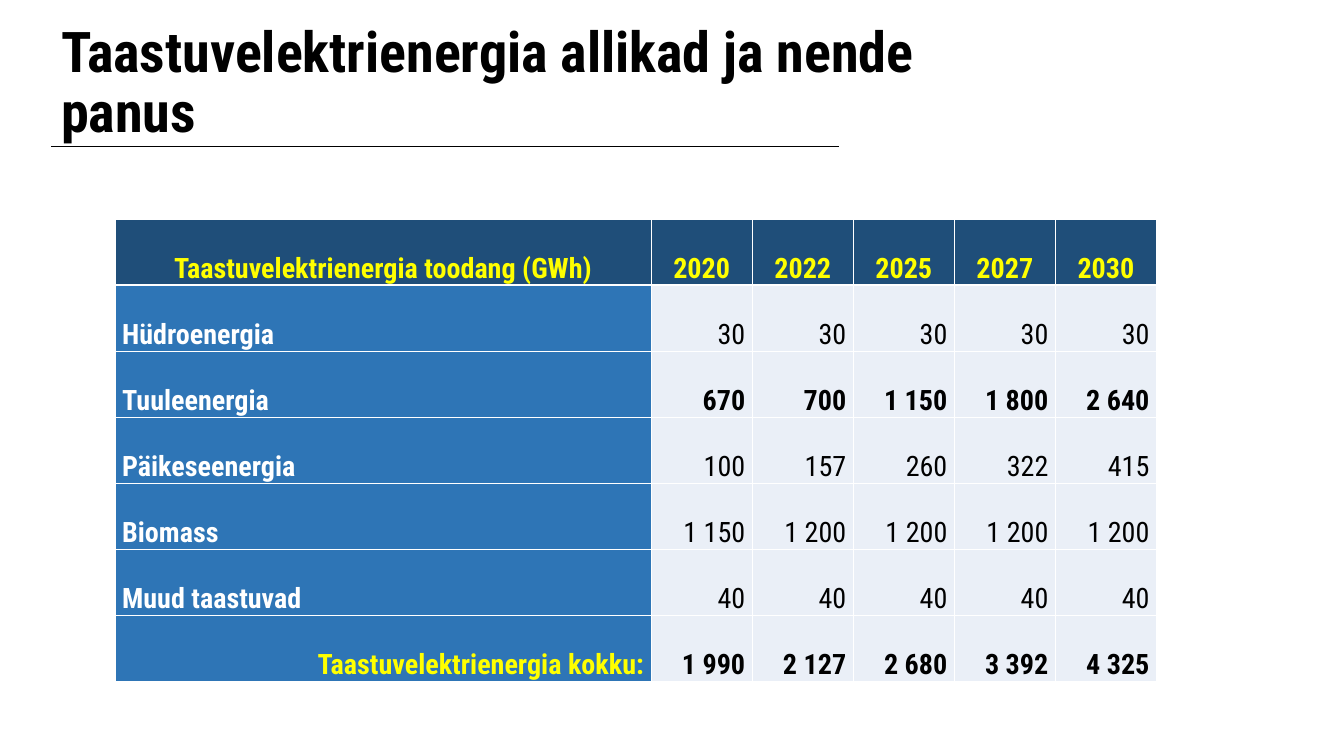
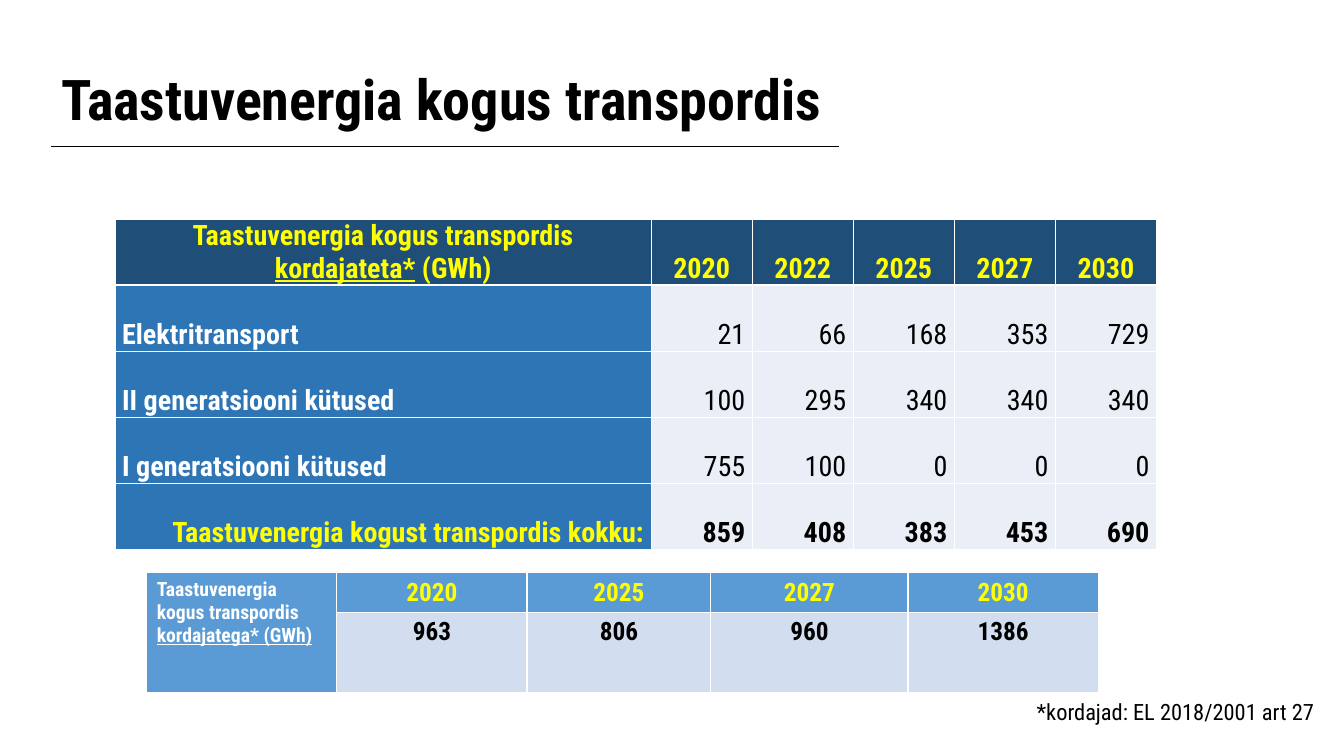
"""Build two slides with tables on renewable energy in electricity and transport."""
from lxml.etree import SubElement
from pptx import Presentation
from pptx.dml.color import RGBColor
from pptx.enum.shapes import MSO_CONNECTOR
from pptx.enum.text import MSO_ANCHOR, MSO_AUTO_SIZE, PP_ALIGN
from pptx.oxml.ns import qn
from pptx.util import Pt

FONT = "Roboto Condensed"
BLACK = RGBColor(0x00, 0x00, 0x00)
WHITE = RGBColor(0xFF, 0xFF, 0xFF)
YELLOW = RGBColor(0xFF, 0xFF, 0x00)
NAVY = RGBColor(0x1F, 0x4E, 0x79)
BLUE = RGBColor(0x2E, 0x75, 0xB6)
PALE = RGBColor(0xEA, 0xEF, 0xF7)
SKY = RGBColor(0x5B, 0x9B, 0xD5)
MIST = RGBColor(0xD2, 0xDE, 0xEF)

YEARS = ["2020", "2022", "2025", "2027", "2030"]
SLIDES = [
    {
        "title": "Taastuvelektrienergia allikad ja nende panus",
        "title_top": 14, "title_height": 92,
        "heading": "Taastuvelektrienergia toodang (GWh)", "heading_spacing": 2,
        "rows": [
            ("Hüdroenergia", ["30", "30", "30", "30", "30"]),
            ("Tuuleenergia", ["670", "700", "1 150", "1 800", "2 640"]),
            ("Päikeseenergia", ["100", "157", "260", "322", "415"]),
            ("Biomass", ["1 150", "1 200", "1 200", "1 200", "1 200"]),
            ("Muud taastuvad", ["40", "40", "40", "40", "40"]),
            ("Taastuvelektrienergia kokku:", ["1 990", "2 127", "2 680", "3 392", "4 325"]),
        ],
        "bold_rows": {"Tuuleenergia"},
    },
    {
        "title": "Taastuvenergia kogus transpordis",
        "title_top": 49, "title_height": 48,
        "heading": [("Taastuvenergia kogus transpordis ", False),
                    ("kordajateta*", True), (" (GWh)", False)],
        "heading_spacing": 1,
        "rows": [
            ("Elektritransport", ["21", "66", "168", "353", "729"]),
            ("II generatsiooni kütused", ["100", "295", "340", "340", "340"]),
            ("I generatsiooni kütused", ["755", "100", "0", "0", "0"]),
            ("Taastuvenergia kogust transpordis kokku:", ["859", "408", "383", "453", "690"]),
        ],
        "bold_rows": set(),
    },
]
WEIGHTED_HEADING = [("Taastuvenergia kogus transpordis ", False),
                    ("kordajatega* (GWh)", True)]
WEIGHTED = [("2020", "963"), ("2025", "806"), ("2027", "960"), ("2030", "1386")]
FOOTNOTE = "*kordajad: EL 2018/2001 art 27"


def write(text_frame, text, size=20, color=BLACK, bold=False, align=PP_ALIGN.LEFT, spacing=1):
    """Write a string, or (string, underlined) pieces, as one paragraph."""
    paragraph = text_frame.paragraphs[0]
    paragraph.alignment = align
    paragraph.line_spacing = float(spacing)
    pieces = [(text, False)] if isinstance(text, str) else text
    for piece, underlined in pieces:
        run = paragraph.add_run()
        run.text = piece
        run.font.name = FONT
        run.font.size = Pt(size)
        run.font.bold = bold
        run.font.underline = underlined
        run.font.color.rgb = color


def add_text(slide, text, left, top, width, height, anchor=MSO_ANCHOR.TOP, **text_format):
    """Add a wrapped text box."""
    text_frame = slide.shapes.add_textbox(Pt(left), Pt(top), Pt(width), Pt(height)).text_frame
    text_frame.word_wrap = True
    text_frame.auto_size = MSO_AUTO_SIZE.NONE
    text_frame.vertical_anchor = anchor
    write(text_frame, text, **text_format)


def add_grid(slide, left, top, widths, heights):
    """Add an empty table with the given column widths and row heights."""
    table = slide.shapes.add_table(len(heights), len(widths), Pt(left), Pt(top),
                                   Pt(sum(widths)), Pt(sum(heights))).table
    for column, width in zip(table.columns, widths):
        column.width = Pt(width)
    for row, height in zip(table.rows, heights):
        row.height = Pt(height)
    return table


def fill_cell(cell, text, fill, margins=None, **text_format):
    """Fill one cell with a colour and text."""
    cell.fill.solid()
    cell.fill.fore_color.rgb = fill
    if margins:
        cell.margin_left = cell.margin_right = Pt(margins[0])
        cell.margin_top = cell.margin_bottom = Pt(margins[1])
    write(cell.text_frame, text, **text_format)


def add_title(slide, content):
    """Add the slide title and the rule below it."""
    add_text(slide, content["title"], 36.5, content["title_top"], 692, content["title_height"],
             anchor=MSO_ANCHOR.MIDDLE, size=40, bold=True, spacing=0.9)
    rule = slide.shapes.add_connector(MSO_CONNECTOR.STRAIGHT, Pt(36.5), Pt(104.5),
                                      Pt(597.5), Pt(104.5))
    rule.line.color.rgb = BLACK
    rule.line.width = Pt(0.75)
    SubElement(rule._element.spPr, qn("a:effectLst"))


def add_energy_table(slide, content):
    """Add the table of yearly amounts, whose last row is the total."""
    rows = content["rows"]
    table = add_grid(slide, 82, 156, [382] + [72] * len(YEARS), [47] * (len(rows) + 1))
    margins = (5, 0)
    for column, heading in enumerate([content["heading"]] + YEARS):
        fill_cell(table.cell(0, column), heading, NAVY, margins, color=YELLOW, bold=True,
                  align=PP_ALIGN.CENTER, spacing=2 if column else content["heading_spacing"])
    for row, (label, values) in enumerate(rows, 1):
        total = row == len(rows)
        fill_cell(table.cell(row, 0), label, BLUE, margins, bold=True, spacing=2,
                  color=YELLOW if total else WHITE,
                  align=PP_ALIGN.RIGHT if total else PP_ALIGN.JUSTIFY)
        for column, value in enumerate(values, 1):
            fill_cell(table.cell(row, column), value, PALE, margins, spacing=2,
                      bold=total or label in content["bold_rows"], align=PP_ALIGN.RIGHT)


def add_weighted_table(slide):
    """Add the small table of amounts with multipliers."""
    table = add_grid(slide, 104.5, 408, [135.5, 135.5, 131, 140.5, 135.5], [28, 56])
    table.cell(0, 0).merge(table.cell(1, 0))
    fill_cell(table.cell(0, 0), WEIGHTED_HEADING, SKY, size=14, color=WHITE, bold=True)
    for column, (year, value) in enumerate(WEIGHTED, 1):
        for row, (text, fill, color) in enumerate([(year, SKY, YELLOW), (value, MIST, BLACK)]):
            fill_cell(table.cell(row, column), text, fill, size=18, color=color, bold=True,
                      align=PP_ALIGN.CENTER)


def main():
    """Build and save the presentation."""
    presentation = Presentation()
    presentation.slide_width = Pt(957.6)
    presentation.slide_height = Pt(538.6)
    for content in SLIDES:
        slide = presentation.slides.add_slide(presentation.slide_layouts[6])
        add_title(slide, content)
        add_energy_table(slide, content)
    add_weighted_table(slide)
    add_text(slide, FOOTNOTE, 731.5, 492, 224, 27, size=16, spacing=1.1)
    presentation.save("out.pptx")


if __name__ == "__main__":
    main()
